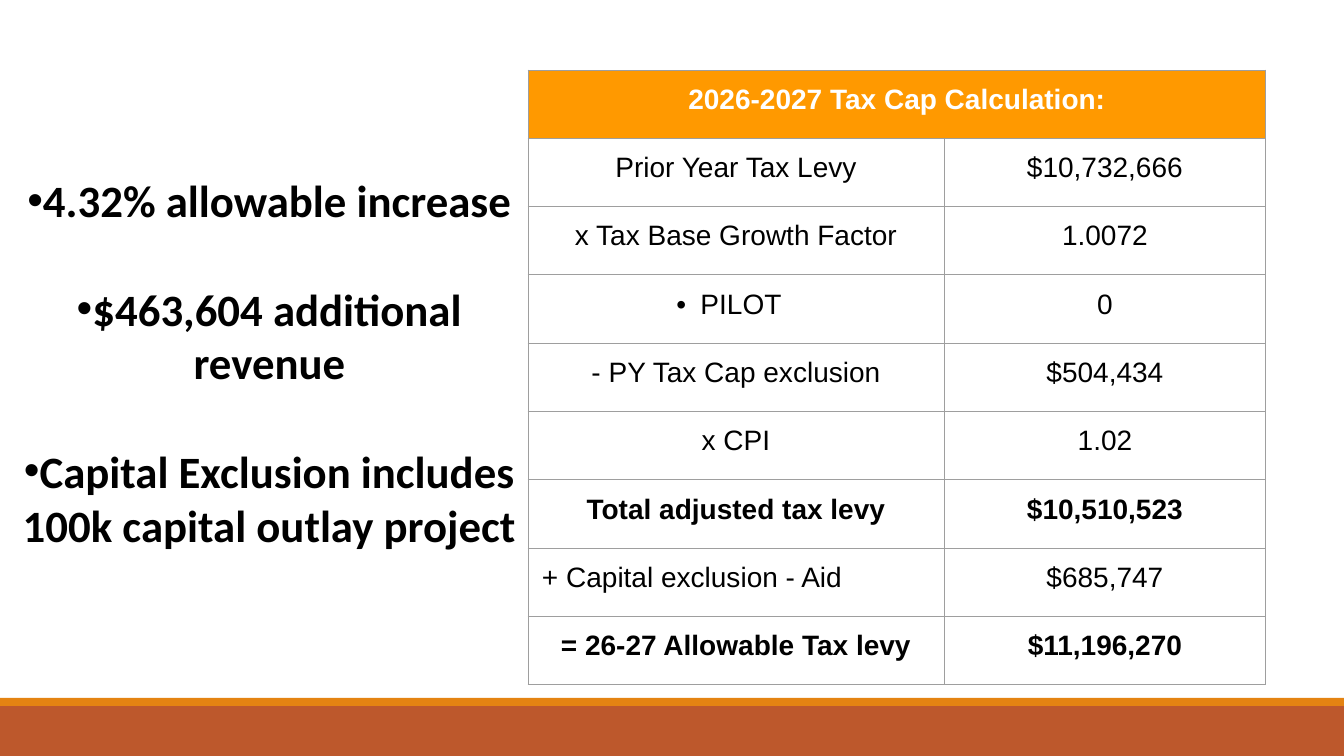
"""Build the tax cap calculation slide."""
import lxml.etree
import pptx
import pptx.dml.color
import pptx.enum.shapes
import pptx.enum.text
import pptx.oxml.ns
import pptx.util
from dataclasses import dataclass

POINTS = [
    "4.32% allowable increase",
    "$463,604 additional revenue",
    "Capital Exclusion includes 100k capital outlay project",
]
TITLE = "2026-2027 Tax Cap Calculation:"
ROWS = [
    ("Prior Year Tax Levy", "$10,732,666"),
    ("x Tax Base Growth Factor", "1.0072"),
    ("PILOT", "0"),
    ("- PY Tax Cap exclusion", "$504,434"),
    ("x CPI", "1.02"),
    ("Total adjusted tax levy", "$10,510,523"),
    ("+ Capital exclusion - Aid", "$685,747"),
    ("= 26-27 Allowable Tax levy", "$11,196,270"),
]
BOLD = {"Total adjusted tax levy", "= 26-27 Allowable Tax levy"}
LEFT = {"+ Capital exclusion - Aid"}
DOTTED = {"PILOT"}

WIDE, HIGH = 1344, 756
GRID = (528, 70, 738, 615)
COLS = (416, 322)
LIST = (11, 168, 517, 390)
PAD = 14


@dataclass(frozen=True)
class Theme:
    """Hold the colours, fonts and type sizes."""
    head: str = "FF9900"
    foot: str = "BD582C"
    strip: str = "E48312"
    edge: str = "9E9E9E"
    ink: str = "000000"
    light: str = "FFFFFF"
    cell_font: str = "Arial"
    list_font: str = "Calibri"
    cell_size: int = 20
    list_size: int = 32
    list_gap: int = 39
    edge_width: float = 0.75


THEME = Theme()
BARS = [((0, 706, WIDE, 50), THEME.foot), ((0, 698, WIDE, 8), THEME.strip)]
ALIGN = pptx.enum.text.PP_ALIGN


def px(size):
    """Turn px into EMU."""
    return pptx.util.Emu(round(size * 914400 / 100.8))


def rgb(code):
    """Turn a hex code into a colour."""
    return pptx.dml.color.RGBColor.from_string(code)


def add(parent, tag, **attrs):
    """Append a drawing element."""
    node = lxml.etree.SubElement(parent, pptx.oxml.ns.qn(tag))
    for key, value in attrs.items():
        node.set(key, str(value))
    return node


def dot(para, hang=0, right=0):
    """Give a paragraph a round bullet."""
    props = para._p.get_or_add_pPr()
    props.set("marL", str(px(hang)))
    props.set("marR", str(px(right)))
    props.set("indent", str(-px(hang)))
    add(props, "a:buFont", typeface="Arial")
    add(props, "a:buChar", char="•")


def style(para, font, size, color, bold):
    """Set the font of a paragraph."""
    para.font.name = font
    para.font.size = pptx.util.Pt(size)
    para.font.bold = bold
    para.font.color.rgb = rgb(color)


def frame(cell):
    """Draw the four borders of a cell."""
    props = cell._tc.get_or_add_tcPr()
    for side in "LRTB":
        line = add(props, f"a:ln{side}", w=pptx.util.Pt(THEME.edge_width))
        add(add(line, "a:solidFill"), "a:srgbClr", val=THEME.edge)


def write(cell, text, color, bold):
    """Fill in the text of a cell."""
    cell.margin_left = cell.margin_right = px(PAD)
    cell.margin_top = cell.margin_bottom = px(PAD)
    para = cell.text_frame.paragraphs[0]
    para.text = text
    para.alignment = ALIGN.LEFT if text in LEFT else ALIGN.CENTER
    if text in DOTTED:
        dot(para, 24, PAD)
    style(para, THEME.cell_font, THEME.cell_size, color, bold)


def add_bars(slide):
    """Draw the footer bars."""
    for box, color in BARS:
        bar = slide.shapes.add_shape(
            pptx.enum.shapes.MSO_SHAPE.RECTANGLE, *map(px, box))
        bar.shadow.inherit = False
        bar.fill.solid()
        bar.fill.fore_color.rgb = rgb(color)
        bar.line.fill.background()


def add_grid(slide):
    """Draw the calculation table."""
    count = len(ROWS) + 1
    grid = slide.shapes.add_table(count, len(COLS), *map(px, GRID)).table
    grid.first_row = grid.horz_banding = False
    for col, width in zip(grid.columns, COLS):
        col.width = px(width)
    for row in grid.rows:
        row.height = px(GRID[3] / count)
    for cell in grid.iter_cells():
        frame(cell)
        cell.fill.background()
    head = grid.cell(0, 0)
    head.merge(grid.cell(0, len(COLS) - 1))
    head.fill.solid()
    head.fill.fore_color.rgb = rgb(THEME.head)
    write(head, TITLE, THEME.light, True)
    for r, row in enumerate(ROWS, 1):
        for c, text in enumerate(row):
            write(grid.cell(r, c), text, THEME.ink, row[0] in BOLD)


def add_list(slide):
    """Write the bullet points."""
    body = slide.shapes.add_textbox(*map(px, LIST)).text_frame
    body.word_wrap = True
    body.auto_size = pptx.enum.text.MSO_AUTO_SIZE.SHAPE_TO_FIT_TEXT
    for i, text in enumerate(POINTS):
        para = body.add_paragraph() if i else body.paragraphs[0]
        para.text = text
        para.alignment = ALIGN.CENTER
        if i:
            para.space_before = pptx.util.Pt(THEME.list_gap)
        dot(para)
        style(para, THEME.list_font, THEME.list_size, THEME.ink, True)


def main():
    """Build and save the slide."""
    deck = pptx.Presentation()
    deck.slide_width, deck.slide_height = px(WIDE), px(HIGH)
    slide = deck.slides.add_slide(deck.slide_layouts[6])
    add_bars(slide)
    add_grid(slide)
    add_list(slide)
    deck.save("out.pptx")


if __name__ == "__main__":
    main()
